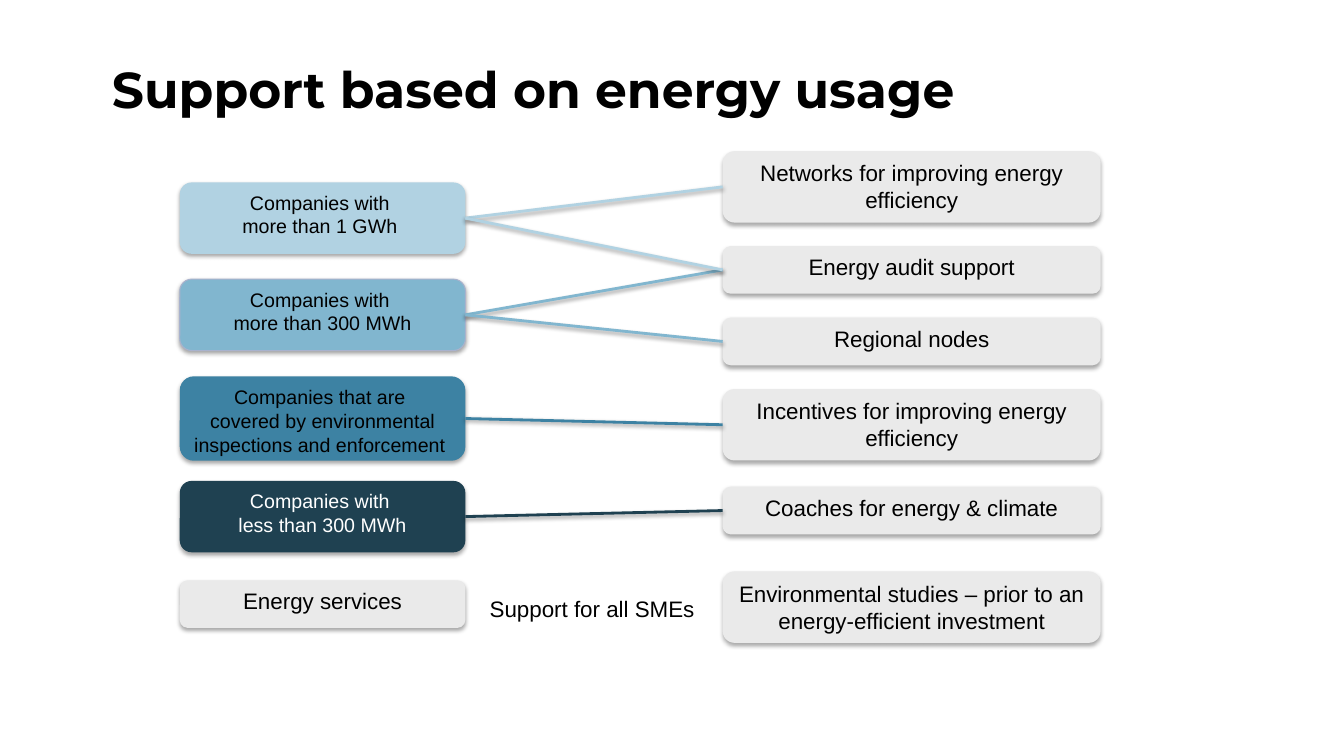
from lxml import etree
from pptx import Presentation
from pptx.dml.color import RGBColor
from pptx.enum.shapes import MSO_CONNECTOR, MSO_SHAPE
from pptx.enum.text import MSO_ANCHOR, PP_ALIGN
from pptx.oxml.ns import qn
from pptx.util import Pt

COLORS = {
    "black": "000000", "white": "FFFFFF", "grey": "EAEAEA", "edge": "A9B2CD",
    "pale": "B1D2E2", "light": "81B6CF", "mid": "3D82A3", "dark": "1F4151",
}
C = {name: RGBColor.from_string(value) for name, value in COLORS.items()}


def add_text(tf, lines, size, color="black", align=PP_ALIGN.CENTER, font="Arial"):
    for i, line in enumerate(lines):
        p = tf.paragraphs[0] if i == 0 else tf.add_paragraph()
        p.alignment = align
        r = p.add_run()
        r.text = line
        r.font.size, r.font.name = Pt(size), font
        r.font.color.rgb = C[color]


def add_shadow(sp, distance, alpha):
    effects = etree.SubElement(sp.element.spPr, qn("a:effectLst"))
    shadow = etree.SubElement(effects, qn("a:outerShdw"), blurRad=str(Pt(3.1)),
                              dist=str(Pt(distance)), dir="5400000", rotWithShape="0")
    color = etree.SubElement(shadow, qn("a:srgbClr"), val=COLORS["black"])
    etree.SubElement(color, qn("a:alpha"), val=str(alpha * 1000))


prs = Presentation()
prs.slide_width, prs.slide_height = Pt(960), Pt(540)
s = prs.slides.add_slide(prs.slide_layouts[6])

# Title
tf = s.shapes.add_textbox(Pt(80), Pt(44.6), Pt(800), Pt(78)).text_frame
tf.word_wrap = True
tf.margin_left = tf.margin_right = tf.margin_top = tf.margin_bottom = 0
add_text(tf, ["Support based on energy usage"], 36, align=PP_ALIGN.LEFT, font="Montserrat")
tf.paragraphs[0].line_spacing = Pt(40)
tf.paragraphs[0].runs[0].font.bold = True

# Boxes: key, top, height, fill, text colour, text size, lines
companies = [
    ("1 GWh", 130.3, 51, "pale", "black", 14, ["Companies with ", "more than 1 GWh "]),
    ("300 MWh", 199.4, 51, "light", "black", 14, ["Companies with ", "more than 300 MWh"]),
    ("inspected", 268.8, 60.3, "mid", "black", 14,
     ["Companies that are ", "covered by environmental inspections and enforcement "]),
    ("small", 343.5, 51, "dark", "white", 14, ["Companies with ", "less than 300 MWh"]),
    ("services", 414.5, 34, "grey", "black", 16, ["Energy services"]),
]
supports = [
    ("networks", 108, 51, ["Networks for improving energy efficiency"]),
    ("audit", 175.8, 34, ["Energy audit support"]),
    ("nodes", 226.9, 34, ["Regional nodes"]),
    ("incentives", 277.9, 51, ["Incentives for improving energy efficiency"]),
    ("coaches", 347.7, 34, ["Coaches for energy & climate"]),
    ("studies", 408.2, 51, ["Environmental studies – prior to an energy-efficient investment"]),
]
rows = [(128.4, 204, *row) for row in companies]
rows += [(516.2, 270, key, top, height, "grey", "black", 16, lines)
         for key, top, height, lines in supports]
boxes = {}
for left, width, key, top, height, fill, color, size, lines in rows:
    sp = s.shapes.add_shape(MSO_SHAPE.ROUNDED_RECTANGLE,
                            Pt(left), Pt(top), Pt(width), Pt(height))
    sp.fill.solid()
    sp.fill.fore_color.rgb = C[fill]
    if key == "300 MWh":
        sp.line.color.rgb = C["edge"]
        sp.line.width = Pt(0.75)
    else:
        sp.line.fill.background()
    add_shadow(sp, 1.8, 35)
    sp.text_frame.word_wrap = True
    sp.text_frame.vertical_anchor = MSO_ANCHOR.TOP
    add_text(sp.text_frame, lines, size, color)
    boxes[key] = sp

# Links from company groups to support
links = [
    ("small", "coaches", "dark"), ("300 MWh", "audit", "light"),
    ("1 GWh", "networks", "pale"), ("1 GWh", "audit", "pale"),
    ("inspected", "incentives", "mid"), ("300 MWh", "nodes", "light"),
]
RIGHT_SIDE, LEFT_SIDE = 3, 1
for company, support, color in links:
    link = s.shapes.add_connector(MSO_CONNECTOR.STRAIGHT, 0, 0, 0, 0)
    link.begin_connect(boxes[company], RIGHT_SIDE)
    link.end_connect(boxes[support], LEFT_SIDE)
    link.line.color.rgb = C[color]
    link.line.width = Pt(2)
    add_shadow(link, 1.6, 38)

# Label between the bottom boxes
tf = s.shapes.add_textbox(Pt(342.7), Pt(421.9), Pt(162.7), Pt(26.6)).text_frame
tf.word_wrap = False
add_text(tf, ["Support for all SMEs"], 16, align=PP_ALIGN.LEFT)

prs.save("out.pptx")
